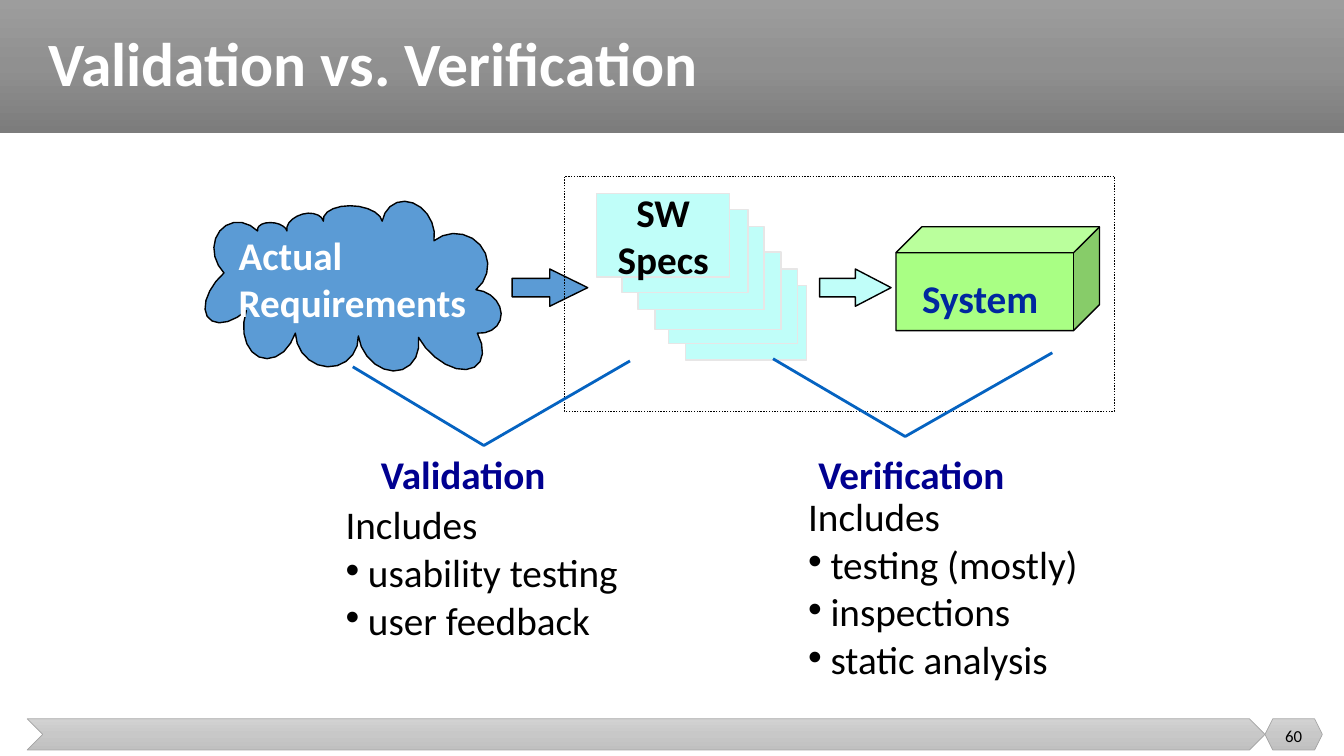
"""Build the Validation vs. Verification slide."""
from copy import deepcopy
from math import cos, pi, sin

from lxml.etree import SubElement
from pptx import Presentation
from pptx.dml.color import RGBColor
from pptx.enum.dml import MSO_LINE
from pptx.enum.shapes import MSO_SHAPE as SHAPE
from pptx.enum.text import MSO_ANCHOR as ANCHOR, MSO_AUTO_SIZE as FIT, PP_ALIGN as ALIGN
from pptx.oxml.ns import qn
from pptx.util import Pt

WHITE = RGBColor(0xFF, 0xFF, 0xFF)
BLACK = RGBColor(0, 0, 0)
BLUE = RGBColor(0x5B, 0x9B, 0xD5)
AQUA = RGBColor(0xC0, 0xFE, 0xF9)
GREEN = RGBColor(0xA9, 0xFF, 0x84)
PALE = RGBColor(0xE7, 0xE6, 0xE6)
GREY = RGBColor(0xA5, 0xA5, 0xA5)
LINK = RGBColor(0x05, 0x63, 0xC1)
NAVY = RGBColor(0, 0, 0x90)
ROYAL = RGBColor(0, 0x27, 0x9F)
HEADER = [RGBColor(v, v, v) for v in (0x9D, 0x90, 0x7C)]
FOOTER = [RGBColor(v, v, v) for v in (0xD2, 0xC8, 0xC0)]

BANDS = [
    (SHAPE.RECTANGLE, (0, 0, 960, 95), HEADER, None),
    (SHAPE.CHEVRON, (19.4, 513.4, 884.2, 22.3), FOOTER, GREY),
    (SHAPE.HEXAGON, (903.6, 513.4, 41, 22.3), FOOTER, GREY),
]
LOBES = [
    {"start": (184, 165), "apex": (157, 165)},
    {"start": (160, 195), "apex": (148, 226)},
    {"start": (176, 222), "apex": (185, 255)},
    {"start": (211, 238), "apex": (234, 262)},
    {"start": (256, 240), "apex": (281, 265)},
    {"start": (299, 241), "apex": (333, 264)},
    {"start": (341, 238), "apex": (358, 224)},
    {"start": (340, 207), "apex": (343, 175)},
    {"start": (310, 172), "apex": (295, 145)},
    {"start": (273, 158), "apex": (250, 147)},
    {"start": (231, 158), "apex": (216, 153)},
    {"start": (205, 165), "apex": (193, 159)},
]
LOBE_STEPS = 10
UNITS_PER_POINT = 10
BRACKETS = [
    [(252, 262), (345.6, 318.2), (450, 257.8)],
    [(552.2, 256.3), (646.6, 311.8), (751.7, 252)],
]
SHEETS = [
    (489.6, 203.8, 86.4, 53.3), (477.4, 192.2, 92.2, 53.3), (468, 180, 90, 55.4),
    (455.8, 162, 90, 59), (444.2, 149.8, 90, 59), (426.2, 138.2, 95, 59.8),
]
HEADINGS = [("Validation", (265, 318.2, 136, 41)), ("Verification", (577.4, 318.2, 154.8, 41))]
LISTS = [
    (("Includes", "usability testing", "user feedback"), (239.8, 365.8, 237.6, 104.4)),
    (("Includes", "testing (mostly)", "inspections", "static analysis"), (570.2, 360, 237.6, 141.8)),
]
FITTED = {"word_wrap": False, "auto_size": FIT.SHAPE_TO_FIT_TEXT}
MIDDLE = {"word_wrap": True, "vertical_anchor": ANCHOR.MIDDLE}
CENTERED = {"alignment": ALIGN.CENTER}
BULLET_INDENT = Pt(16)


def paint(s, fill=None, line=None, width=1):
    s.shadow.inherit = False
    if isinstance(fill, list):
        s.fill.gradient()
        s.fill.gradient_angle = 270
        stops = s._element.spPr.find(qn("a:gradFill")).find(qn("a:gsLst"))
        stops.insert(1, deepcopy(stops[0]))
        for i, (stop, color) in enumerate(zip(s.fill.gradient_stops, fill)):
            stop.position = i / 2
            stop.color.rgb = color
    elif fill is not None:
        s.fill.solid()
        s.fill.fore_color.rgb = fill
    else:
        s.fill.background()
    if line is None:
        s.line.fill.background()
    else:
        s.line.color.rgb = line
        s.line.width = Pt(width)
    return s


def preset(shapes, kind, box, fill=None, line=None, adj=None, width=1):
    s = shapes.add_shape(kind, *map(Pt, box))
    if adj is not None:
        s.adjustments[len(s.adjustments) - 1] = adj
    return paint(s, fill, line, width)


def lobe_arc(start, apex, end):
    """Return points of the half ellipse from start over apex, stopping before end."""
    points = []
    for step in range(LOBE_STEPS):
        angle = pi * step / LOBE_STEPS
        points.append(tuple(
            (a + b) / 2 - cos(angle) * (b - a) / 2 + sin(angle) * (top - (a + b) / 2)
            for a, top, b in zip(start, apex, end)))
    return points


def cloud_points():
    following = LOBES[1:] + LOBES[:1]
    return [point for lobe, after in zip(LOBES, following)
            for point in lobe_arc(lobe["start"], lobe["apex"], after["start"])]


def outline(shapes, points, close, **style):
    first, *rest = [(x * UNITS_PER_POINT, y * UNITS_PER_POINT) for x, y in points]
    builder = shapes.build_freeform(*first, scale=Pt(1) / UNITS_PER_POINT)
    builder.add_line_segments(rest, close=close)
    return paint(builder.convert_to_shape(), **style)


def write(s, lines, color, size=28, bold=True, frame=FITTED, para=None):
    tf = s.text_frame
    for name, value in frame.items():
        setattr(tf, name, value)
    for i, line in enumerate(lines):
        p = tf.add_paragraph() if i else tf.paragraphs[0]
        p.text = line
        for name, value in (para or {}).items():
            setattr(p, name, value)
        for r in p.runs:
            for name, value in {"name": "Calibri", "size": Pt(size), "bold": bold}.items():
                setattr(r.font, name, value)
            r.font.color.rgb = color
    return tf


def label(shapes, lines, box, color, **style):
    return write(shapes.add_textbox(*map(Pt, box)), lines, color, **style)


def bullet(p):
    pr = p._p.get_or_add_pPr()
    pr.set("marL", str(BULLET_INDENT))
    pr.set("indent", str(-BULLET_INDENT))
    SubElement(pr, qn("a:buFont"), typeface="Arial")
    SubElement(pr, qn("a:buChar"), char="•")


def draw_bands(shapes):
    for kind, box, fill, line in BANDS:
        preset(shapes, kind, box, fill, line, width=0.5)
    label(shapes, ["Validation vs. Verification"], (27.4, 0, 917.3, 95), WHITE, size=44,
          frame=MIDDLE, para={"line_spacing": 0.9})
    label(shapes, ["60"], (903.6, 511.2, 41, 28.8), BLACK, size=12, bold=False,
          frame=MIDDLE, para=CENTERED)


def draw_requirements(shapes):
    outline(shapes, cloud_points(), True, fill=BLUE, line=BLACK)
    label(shapes, ["Actual", "Requirements"], (163.4, 162, 184.3, 74.9), WHITE)
    preset(shapes, SHAPE.RIGHT_ARROW, (365.8, 192.2, 54, 26.6), BLUE, BLACK, 1.02)


def draw_product(shapes):
    border = preset(shapes, SHAPE.RECTANGLE, (403.2, 126, 393.1, 167.8), line=BLACK)
    border.line.dash_style = MSO_LINE.ROUND_DOT
    preset(shapes, SHAPE.RIGHT_ARROW, (585.4, 192.2, 51.1, 26.6), AQUA, BLACK, 0.96)
    preset(shapes, SHAPE.CUBE, (640, 162, 145.4, 74.2), GREEN, BLACK, 0.25)
    *_, front = [preset(shapes, SHAPE.RECTANGLE, box, AQUA, PALE) for box in SHEETS]
    write(front, ["SW\vSpecs"], BLACK, frame={**MIDDLE, "word_wrap": False}, para=CENTERED)
    label(shapes, ["System"], (651.6, 192.2, 103, 41), ROYAL)


def draw_explanations(shapes):
    for points in BRACKETS:
        outline(shapes, points, False, line=LINK, width=2)
    for text, box in HEADINGS:
        label(shapes, [text], box, NAVY)
    for lines, box in LISTS:
        tf = label(shapes, lines, box, BLACK, bold=False, frame={**FITTED, "word_wrap": True},
                   para={"line_spacing": 0.6, "space_before": Pt(13.9)})
        for p in tf.paragraphs[1:]:
            bullet(p)


def main():
    prs = Presentation()
    prs.slide_width, prs.slide_height = Pt(960), Pt(540)
    shapes = prs.slides.add_slide(prs.slide_layouts[6]).shapes
    draw_bands(shapes)
    draw_requirements(shapes.add_group_shape().shapes)
    draw_product(shapes.add_group_shape().shapes)
    draw_explanations(shapes)
    prs.save("out.pptx")


if __name__ == "__main__":
    main()
